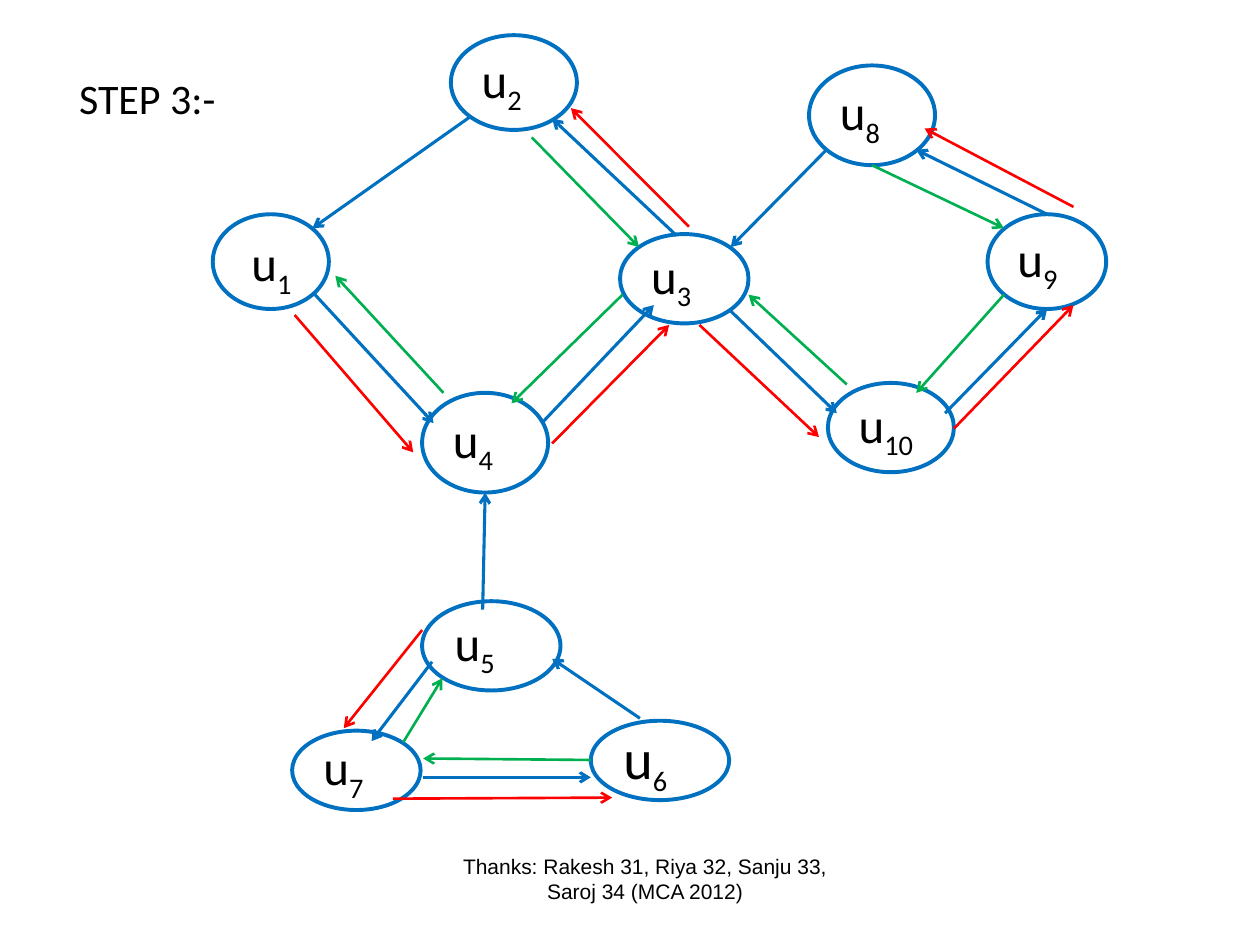
"""Build the third step of a graph traversal with nodes u1 to u10."""
from typing import NamedTuple

from lxml.etree import SubElement
from pptx import Presentation
from pptx.dml.color import RGBColor
from pptx.enum.shapes import MSO_CONNECTOR as Connector, MSO_SHAPE as Shape
from pptx.enum.text import MSO_ANCHOR as Anchor, PP_ALIGN as Align
from pptx.oxml.ns import qn
from pptx.util import Cm, Pt

BLACK, WHITE = "000000", "FFFFFF"
BLUE, RED, GREEN = "0070C0", "FF0000", "00B050"


class Box(NamedTuple):
    left: float
    top: float
    width: float
    height: float


class Node(NamedTuple):
    index: str
    box: Box
    letter_size: int = 28


class Arrow(NamedTuple):
    x1: float
    y1: float
    x2: float
    y2: float


class ArrowSet(NamedTuple):
    color: str
    weight: float
    arrows: list[Arrow]


UNLABELLED_NODE = Box(4.29, 4.32, 2.34, 1.91)
U1_LABEL = Box(4.37, 4.57, 2.34, 1.45)
STEP = Box(0.99, 0.99, 3.96, 1.98)
THANKS = Box(8.94, 16.95, 8.13, 1.52)

NODES = [
    Node("2", Box(9.09, 0.71, 2.54, 1.91)),
    Node("3", Box(12.5, 4.72, 2.59, 1.8)),
    Node("4", Box(8.51, 7.92, 2.54, 2.01)),
    Node("5", Box(8.51, 12.12, 2.79, 1.8)),
    Node("6", Box(11.91, 14.53, 2.79, 1.6), 32),
    Node("7", Box(5.89, 14.73, 2.59, 1.6)),
    Node("8", Box(16.31, 1.32, 2.54, 2.01)),
    Node("9", Box(19.91, 4.32, 2.39, 1.91)),
    Node("10", Box(16.69, 7.72, 2.54, 1.8)),
]

ARROW_SETS = [
    ArrowSet(BLUE, 1.75, [
        Arrow(9.47, 2.36, 6.3, 4.6),
        Arrow(6.35, 5.94, 8.74, 8.53),
        Arrow(13.64, 4.75, 11.13, 2.39),
        Arrow(10.92, 8.53, 13.18, 6.15),
        Arrow(16.66, 3.02, 14.73, 4.98),
        Arrow(21.11, 4.32, 18.47, 3.02),
        Arrow(19.05, 8.33, 21.11, 6.22),
        Arrow(14.73, 6.27, 16.87, 8.33),
        Arrow(9.73, 12.29, 9.78, 9.93),
        Arrow(8.71, 13.34, 7.49, 14.94),
        Arrow(12.9, 14.48, 11.13, 13.28),
        Arrow(8.53, 15.67, 11.91, 15.67),
    ]),
    ArrowSet(RED, 1.5, [
        Arrow(5.94, 6.35, 8.33, 9.12),
        Arrow(11.13, 8.94, 13.49, 6.55),
        Arrow(14.1, 6.55, 16.51, 8.81),
        Arrow(19.23, 8.64, 21.64, 6.15),
        Arrow(21.64, 4.17, 18.64, 2.59),
        Arrow(13.89, 4.57, 11.51, 2.18),
        Arrow(8.51, 12.7, 6.93, 14.68),
        Arrow(7.92, 16.1, 12.34, 16.08),
    ]),
    ArrowSet(GREEN, 1.5, [
        Arrow(10.72, 2.77, 12.88, 4.98),
        Arrow(17.58, 3.33, 20.24, 4.6),
        Arrow(20.24, 5.94, 18.47, 7.92),
        Arrow(17.07, 7.75, 15.09, 5.94),
        Arrow(12.55, 5.94, 10.31, 8.13),
        Arrow(8.13, 14.96, 8.92, 13.67),
        Arrow(8.94, 7.92, 6.76, 5.56),
        Arrow(11.91, 15.32, 8.53, 15.29),
    ]),
]


def rgb(color: str) -> RGBColor:
    return RGBColor.from_string(color)


def place(box: Box) -> list[Cm]:
    return [Cm(length) for length in box]


def add_run(paragraph, text: str, size: int, font: str = "Calibri"):
    run = paragraph.add_run()
    run.text = text
    run.font.name, run.font.size = font, Pt(size)
    run.font.color.rgb = rgb(BLACK)
    return run


def write_label(frame, index: str, letter_size: int = 28) -> None:
    paragraph = frame.paragraphs[0]
    paragraph.alignment = Align.LEFT
    add_run(paragraph, "u", letter_size)
    subscript = add_run(paragraph, index, 28)
    subscript.font._element.set("baseline", "-25000")


def draw_outline(slide, kind: Shape, box: Box, line: str, weight: float):
    outline = slide.shapes.add_shape(kind, *place(box))
    outline.shadow.inherit = False
    outline.fill.solid()
    outline.fill.fore_color.rgb = rgb(WHITE)
    outline.line.color.rgb = rgb(line)
    outline.line.width = Pt(weight)
    outline.text_frame.vertical_anchor = Anchor.MIDDLE
    return outline


def draw_node(slide, box: Box):
    return draw_outline(slide, Shape.OVAL, box, BLUE, 2.25)


def draw_arrow(slide, arrow: Arrow, color: str, weight: float) -> None:
    edge = slide.shapes.add_connector(Connector.STRAIGHT, *map(Cm, arrow))
    edge.line.color.rgb = rgb(color)
    edge.line.width = Pt(weight)
    SubElement(edge.line._get_or_add_ln(), qn("a:tailEnd"), type="arrow")
    SubElement(edge._element.spPr, qn("a:effectLst"))


def add_text_frame(slide, box: Box):
    frame = slide.shapes.add_textbox(*place(box)).text_frame
    frame.word_wrap = True
    return frame


def main() -> None:
    deck = Presentation()
    deck.slide_width, deck.slide_height = Cm(25.4), Cm(19.05)
    slide = deck.slides.add_slide(deck.slide_layouts[6])

    draw_node(slide, UNLABELLED_NODE)
    u1_frame = add_text_frame(slide, U1_LABEL)
    u1_frame.margin_left = Cm(0.7)
    write_label(u1_frame, "1")
    for node in NODES:
        write_label(draw_node(slide, node.box).text_frame, node.index, node.letter_size)

    for color, weight, arrows in ARROW_SETS:
        for arrow in arrows:
            draw_arrow(slide, arrow, color, weight)

    step = draw_outline(slide, Shape.RECTANGLE, STEP, WHITE, 2).text_frame.paragraphs[0]
    step.alignment = Align.CENTER
    add_run(step, "STEP 3:-", 24)

    thanks_frame = add_text_frame(slide, THANKS)
    thanks_frame.vertical_anchor = Anchor.MIDDLE
    thanks = thanks_frame.paragraphs[0]
    thanks.alignment = Align.CENTER
    add_run(thanks, "Thanks: Rakesh 31, Riya 32, Sanju 33, Saroj 34 (MCA 2012)", 12, "Arial")

    deck.save("out.pptx")


if __name__ == "__main__":
    main()
